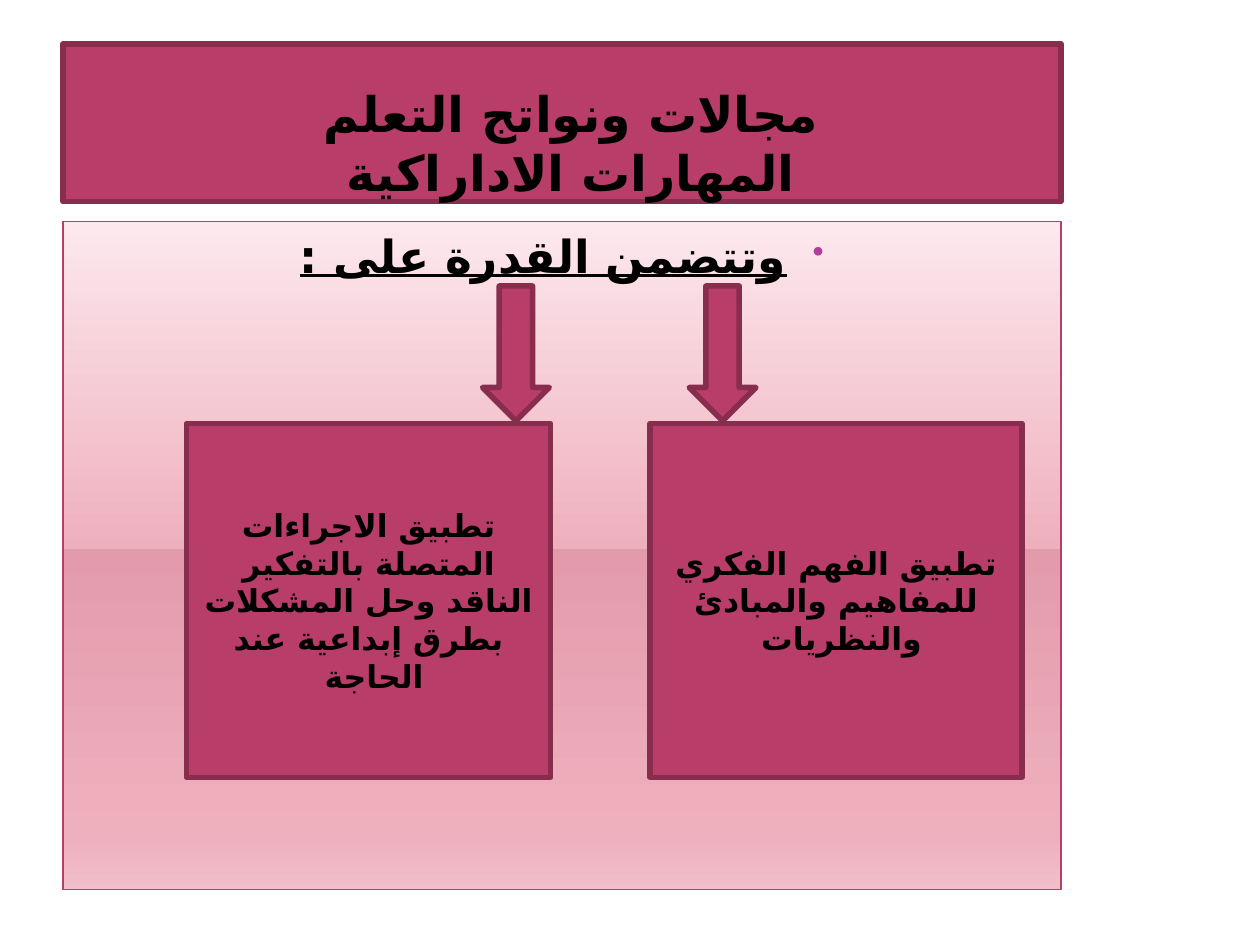
from lxml import etree
from pptx import Presentation
from pptx.dml.color import RGBColor
from pptx.enum.shapes import MSO_SHAPE
from pptx.enum.text import MSO_ANCHOR, PP_ALIGN
from pptx.oxml.ns import qn
from pptx.util import Inches, Pt

RECT, DOWN_ARROW = MSO_SHAPE.RECTANGLE, MSO_SHAPE.DOWN_ARROW
TOP, MIDDLE, BOTTOM = MSO_ANCHOR.TOP, MSO_ANCHOR.MIDDLE, MSO_ANCHOR.BOTTOM
CENTER = PP_ALIGN.CENTER

FONT, ARABIC_FONT = "Lato", "DejaVu Sans"
BLACK, ROSE, DARK_ROSE, PURPLE = "000000", "B83D68", "882D4D", "B13F9A"
PANEL_STOPS = [(0, "FCE8ED"), (49, "EFB0BE"), (49, "E39BAC"),
               (92, "EFB0BE"), (100, "F0BEC9")]


def rgb(value):
    return RGBColor.from_string(value)


def add_xml(parent, tag, **attrs):
    return etree.SubElement(parent, qn(tag), attrs)


class SlideBuilder:
    def __init__(self, prs):
        self.s = prs.slides.add_slide(prs.slide_layouts[6])

    def shape(self, kind, x, y, w, h, line=DARK_ROSE, width=3.15):
        sp = self.s.shapes.add_shape(kind, Inches(x), Inches(y), Inches(w), Inches(h))
        sp.shadow.inherit = False
        sp.fill.solid()
        sp.fill.fore_color.rgb = rgb(ROSE)
        sp.line.color.rgb = rgb(line)
        sp.line.width = Pt(width)
        return sp

    def gradient(self, sp, stops):
        """Fill a shape from top to bottom with (percent, colour) stops."""
        sp.fill.gradient()
        grad = sp._element.spPr.find(qn("a:gradFill"))
        for child in list(grad):
            grad.remove(child)
        stop_list = add_xml(grad, "a:gsLst")
        for percent, color in stops:
            gs = add_xml(stop_list, "a:gs", pos=str(percent * 1000))
            add_xml(gs, "a:srgbClr", val=color)
        add_xml(grad, "a:lin", ang="5400000", scaled="0")

    def text(self, sp, lines, size, anchor=MIDDLE, bullet=False, underline=None):
        """Write one centred right-to-left paragraph, broken between lines."""
        tf = sp.text_frame
        tf.word_wrap = True
        tf.vertical_anchor = anchor
        p = tf.paragraphs[0]
        p.alignment = CENTER
        pPr = p._p.get_or_add_pPr()
        pPr.set("rtl", "1")
        if bullet:
            pPr.set("marL", str(Inches(0.3)))
            pPr.set("indent", str(Inches(-0.3)))
            add_xml(add_xml(pPr, "a:buClr"), "a:srgbClr", val=PURPLE)
            add_xml(pPr, "a:buSzPct", val="73000")
            add_xml(pPr, "a:buChar", char="•")
        for i, line in enumerate(lines):
            if i:
                p.add_line_break()
            r = p.add_run()
            r.text = line
            r.font.name = FONT
            r.font.size = Pt(size)
            r.font.bold = True
            r.font.underline = underline
            r.font.color.rgb = rgb(BLACK)
            add_xml(r._r.get_or_add_rPr(), "a:cs", typeface=ARABIC_FONT)
        return tf


def main():
    prs = Presentation()
    prs.slide_width, prs.slide_height = Inches(10), Inches(7.5)
    slide = SlideBuilder(prs)

    title = slide.shape(RECT, 0.5, 0.35, 7.92, 1.25)
    tf = slide.text(title, ["مجالات ونواتج التعلم ", "المهارات الاداراكية "], 28, BOTTOM)
    tf.margin_left = tf.margin_right = Inches(0.05)
    tf.margin_top = tf.margin_bottom = 0

    panel = slide.shape(RECT, 0.5, 1.76, 7.92, 5.3, ROSE, 0.9)
    slide.gradient(panel, PANEL_STOPS)
    slide.text(panel, ["وتتضمن القدرة على :"], 26, TOP, bullet=True, underline=True)

    skills = [
        (5.16, 2.95, 5.47, "تطبيق الفهم الفكري للمفاهيم والمبادئ والنظريات "),
        (1.48, 2.89, 3.83, "تطبيق الاجراءات المتصلة بالتفكير الناقد وحل المشكلات "
                           "بطرق إبداعية عند الحاجة "),
    ]
    for box_x, box_w, arrow_x, wording in skills:
        box = slide.shape(RECT, box_x, 3.36, box_w, 2.81)
        slide.text(box, [wording], 18)
        slide.shape(DOWN_ARROW, arrow_x, 2.27, 0.53, 1.07)

    prs.save("out.pptx")


if __name__ == "__main__":
    main()
